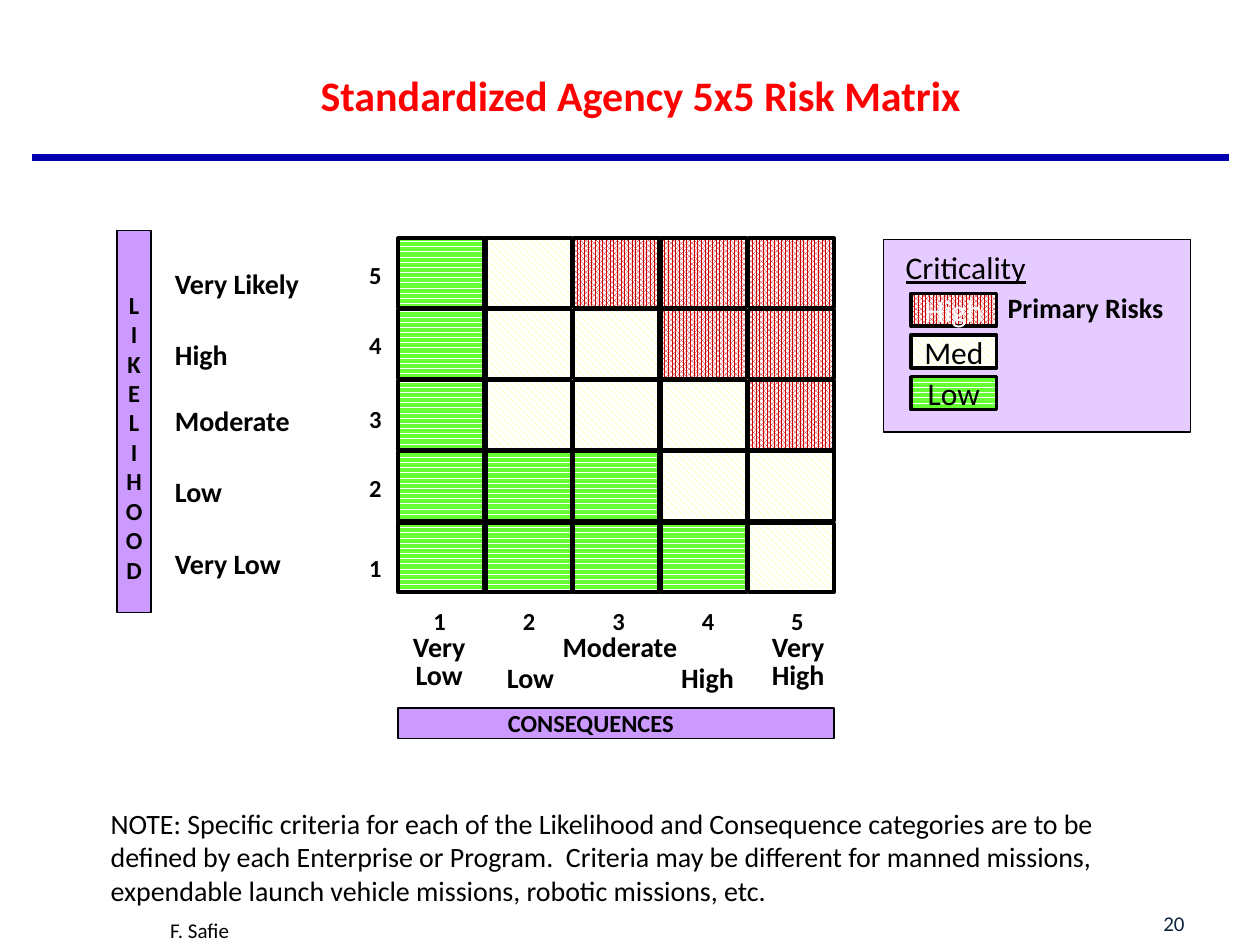
"""Build a slide with a 5x5 risk matrix of likelihood against consequence."""
from dataclasses import dataclass

from lxml.etree import SubElement
from pptx import Presentation
from pptx.dml.color import RGBColor
from pptx.enum.dml import MSO_PATTERN
from pptx.enum.shapes import MSO_CONNECTOR, MSO_SHAPE
from pptx.enum.text import MSO_ANCHOR, PP_ALIGN
from pptx.oxml.ns import qn
from pptx.util import Inches, Pt


@dataclass(frozen=True)
class Theme:
    font: str = "Calibri"
    black: str = "000000"
    white: str = "FFFFFF"
    title: str = "FF0000"
    rule: str = "0000B0"
    page: str = "0F243E"
    violet: str = "CC99FF"
    title_size: int = 24
    legend_size: int = 18
    label_size: int = 16
    digit_size: int = 14
    footer_size: int = 12


theme = Theme()
levels = {
    "H": ("High", MSO_PATTERN.PERCENT_80, "CC0000", theme.white),
    "M": ("Med", MSO_PATTERN.WIDE_DOWNWARD_DIAGONAL, "FFFF66", theme.black),
    "L": ("Low", MSO_PATTERN.DARK_HORIZONTAL, "66FF33", theme.black),
}

presentation = Presentation()
presentation.slide_width, presentation.slide_height = Inches(10), Inches(7.5)
unit = presentation.slide_width // 100
slide = presentation.slides.add_slide(presentation.slide_layouts[5])


def add_box(left, top, width, height, fill=None, level=None, weight=0.75):
    """Add a text box, or a rectangle when filled, in percent of the slide width."""
    span = [round(value * unit) for value in (left, top, width, height)]
    if not (fill or level):
        return slide.shapes.add_textbox(*span)
    shape = slide.shapes.add_shape(MSO_SHAPE.RECTANGLE, *span)
    shape.shadow.inherit = False
    shape.line.color.rgb = RGBColor.from_string(theme.black)
    shape.line.width = Pt(weight)
    if level:
        shape.fill.patterned()
        shape.fill.pattern = levels[level][1]
        shape.fill.fore_color.rgb = RGBColor.from_string(levels[level][2])
        shape.fill.back_color.rgb = RGBColor.from_string(theme.white)
    else:
        shape.fill.solid()
        shape.fill.fore_color.rgb = RGBColor.from_string(fill)
    return shape


def write(shape, text, size, bold=False, color=theme.black, align=PP_ALIGN.LEFT,
          anchor=MSO_ANCHOR.TOP, wrap=False, margins=(1, 0.5, 1, 0.5), spacing=None):
    """Write formatted text in a shape and return its text frame."""
    frame = shape.text_frame
    frame.text = text
    frame.word_wrap = wrap
    frame.vertical_anchor = anchor
    frame.margin_left, frame.margin_top, frame.margin_right, frame.margin_bottom = (
        round(margin * unit) for margin in margins)
    for paragraph in frame.paragraphs:
        paragraph.alignment = align
        paragraph.line_spacing = spacing
        for run in paragraph.runs:
            run.font.name = theme.font
            run.font.size = Pt(size)
            run.font.bold = bold
            run.font.color.rgb = RGBColor.from_string(color)
    return frame


title = slide.shapes.title
title.left, title.top, title.width, title.height = (
    round(value * unit) for value in (9.2, 2.3, 83.3, 10.9))
write(title, "Standardized Agency 5x5 Risk Matrix", theme.title_size, True, theme.title,
      PP_ALIGN.CENTER, MSO_ANCHOR.MIDDLE, wrap=True, spacing=0.9)

rule_top = round(12.5 * unit)
rule = slide.shapes.add_connector(
    MSO_CONNECTOR.STRAIGHT, round(2.5 * unit), rule_top, round(97.5 * unit), rule_top)
rule.line.color.rgb = RGBColor.from_string(theme.rule)
rule.line.width = Pt(4.5)
SubElement(rule.element.spPr, qn("a:effectLst"))

write(add_box(0, 71.7, 31.7, 4.2), "F. Safie", theme.footer_size,
      align=PP_ALIGN.CENTER, anchor=MSO_ANCHOR.MIDDLE, wrap=True)
write(add_box(71.7, 70.8, 23.3, 5), "20", theme.footer_size, color=theme.page,
      align=PP_ALIGN.RIGHT, anchor=MSO_ANCHOR.MIDDLE, wrap=True)

legend = add_box(70.1, 19, 24.4, 15.3, theme.violet)
legend_color = legend.element.spPr.find(qn("a:solidFill"))[0]
SubElement(legend_color, qn("a:alpha")).set("val", "50000")
for row, (level, (name, _, _, color)) in enumerate(levels.items()):
    write(add_box(72.3, 23.3 + 3.3 * row, 6.8, 2.6, level=level, weight=2), name,
          theme.legend_size, color=color, align=PP_ALIGN.CENTER, anchor=MSO_ANCHOR.MIDDLE)
heading = write(add_box(70.9, 19.2, 11.6, 4), "Criticality", theme.legend_size)
heading.paragraphs[0].runs[0].font.underline = True
write(add_box(78.9, 22.6, 14.5, 3.7), "Primary Risks", theme.label_size, True,
      align=PP_ALIGN.CENTER)

matrix_left, matrix_top, column_step, row_step = 31.6, 18.9, 6.95, 5.65
for row, row_levels in enumerate(["LMHHH", "LMMHH", "LMMMH", "LLLMM", "LLLLM"]):
    for column, level in enumerate(row_levels):
        add_box(matrix_left + column * column_step, matrix_top + row * row_step,
                6.8, 5.5, level=level, weight=2)

digit_margins = (0.5, 0.2, 0.5, 0.2)
likelihoods = [
    ("5", 20.4, "Very Likely", 20.7, 12),
    ("4", 26, "High", 26.3, 6.3),
    ("3", 31.9, "Moderate", 31.5, 11.2),
    ("2", 37.3, "Low", 37.2, 5.8),
    ("1", 43.7, "Very Low", 42.9, 10.6),
]
for digit, digit_top, name, name_top, width in likelihoods:
    write(add_box(28.8, digit_top, 2, 2.9), digit, theme.digit_size, True,
          margins=digit_margins)
    write(add_box(12.9, name_top, width, 3.7), name, theme.label_size, True)

consequences = [
    ("Very Low", 30.6, 49.9, 8.5, True),
    ("Low", 39.2, 52.4, 5.8, False),
    ("Moderate", 43.6, 49.9, 11.2, False),
    ("High", 53, 52.4, 6.3, False),
    ("Very High", 59.7, 49.9, 7.3, True),
]
for column, (name, left, top, width, wrap) in enumerate(consequences):
    write(add_box(33.9 + 7.1 * column, 47.9, 2, 2.9), str(column + 1), theme.digit_size,
          True, margins=digit_margins)
    write(add_box(left, top, width, 5.5 if wrap else 3.2), name, theme.label_size, True,
          align=PP_ALIGN.CENTER, wrap=wrap, spacing=Pt(16))

write(add_box(9.3, 18.3, 2.7, 30.3, theme.violet), "\n".join("LIKELIHOOD"),
      theme.digit_size, True, align=PP_ALIGN.CENTER, wrap=True, margins=(0, 4.7, 0, 0))
write(add_box(matrix_left, 56.2, 34.6, 2.4, theme.violet), "CONSEQUENCES",
      theme.digit_size, True, align=PP_ALIGN.CENTER, wrap=True, margins=(0, 0, 4, 0))

write(add_box(7.8, 63.5, 84.5, 9.1),
      "NOTE: Specific criteria for each of the Likelihood and Consequence categories are "
      "to be defined by each Enterprise or Program.  Criteria may be different for manned "
      "missions, expendable launch vehicle missions, robotic missions, etc.",
      theme.label_size, wrap=True)

presentation.save("out.pptx")
